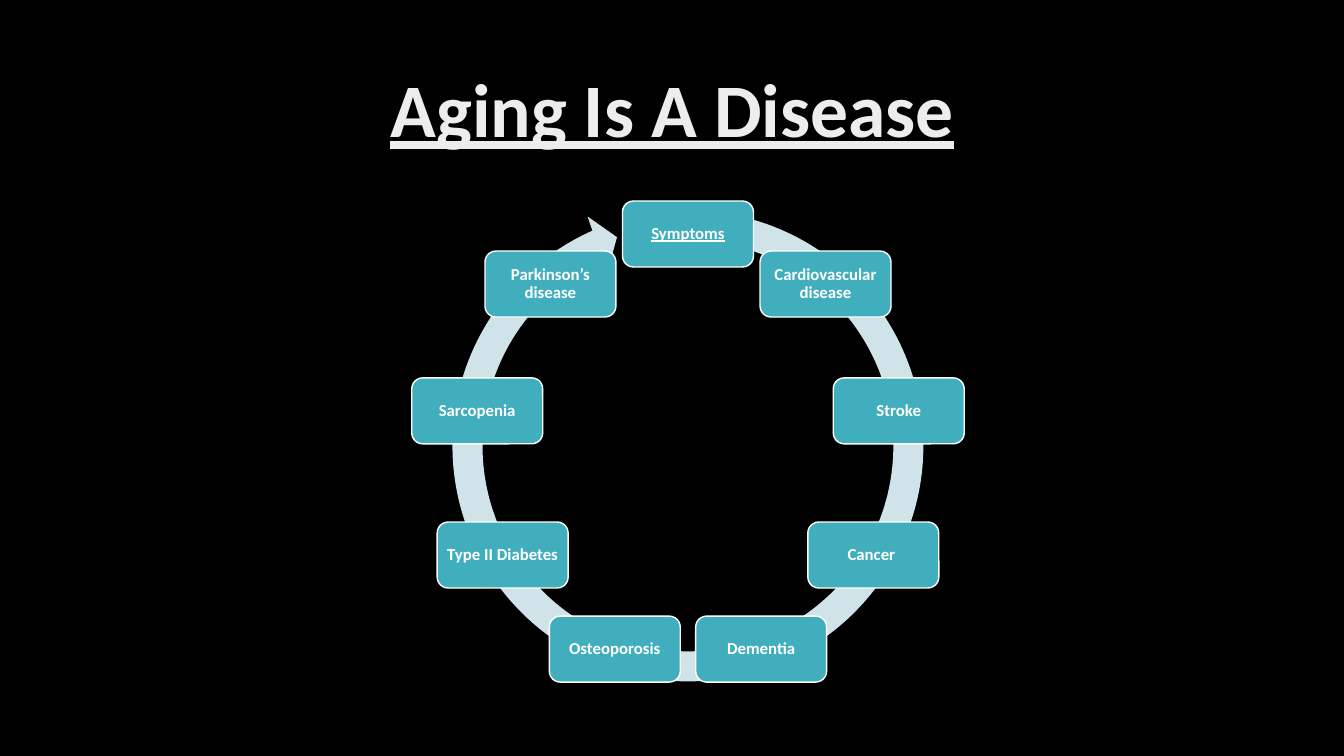
from dataclasses import dataclass
from math import cos, pi, sin

from lxml.etree import SubElement
from pptx import Presentation
from pptx.dml.color import RGBColor
from pptx.enum.shapes import MSO_SHAPE
from pptx.enum.text import MSO_ANCHOR, MSO_AUTO_SIZE, PP_ALIGN
from pptx.oxml import parse_xml
from pptx.oxml.ns import nsdecls, qn
from pptx.util import Emu, Pt


@dataclass(frozen=True)
class Theme:
    font: str = "Calibri"
    background: str = "000000"
    box: str = "41AEBD"
    ring: str = "CFE3E8"
    text: str = "FFFFFF"
    title_stops: tuple = ((0, "BFBFBF"), (28, "EDEDED"), (100, "FFFFFF"))
    title_angle: int = 80
    title_size: int = 54
    label_size: int = 12
    outline: int = 1


THEME = Theme()
EMU_PER_PX = 914400 / 100.8
CENTER_X, CENTER_Y, RADIUS = 688, 448, 214
BOX_W, BOX_H, BOX_INSET = 131, 66, 5
RING_SIZE = 501
RING_ADJUSTMENTS = (0.06, 3.31, 147.43, 168.22, 0.06)
CONDITIONS = (
    "Symptoms", "Cardiovascular disease", "Stroke", "Cancer ", "Dementia",
    "Osteoporosis", "Type II Diabetes", "Sarcopenia", "Parkinson’s disease",
)


def px(n):
    return Emu(round(n * EMU_PER_PX))


def rgb(color):
    return RGBColor.from_string(color)


def write(tf, text, size, color=THEME.text, underline=False):
    tf.word_wrap = True
    tf.auto_size = MSO_AUTO_SIZE.NONE
    tf.vertical_anchor = MSO_ANCHOR.MIDDLE
    p = tf.paragraphs[0]
    p.alignment = PP_ALIGN.CENTER
    p.line_spacing = 0.9
    p.space_before = Pt(0)
    r = p.add_run()
    r.text = text
    r.font.name = THEME.font
    r.font.size = Pt(size)
    r.font.bold = True
    r.font.underline = underline
    if color:
        r.font.fill.solid()
        r.font.fill.fore_color.rgb = rgb(color)
    return r


def fill_gradient(r, stops, angle):
    grad = parse_xml(f"<a:gradFill {nsdecls('a')}><a:gsLst/></a:gradFill>")
    for position, color in stops:
        gs = SubElement(grad[0], qn("a:gs"), pos=str(position * 1000))
        SubElement(gs, qn("a:srgbClr"), val=color)
    SubElement(grad, qn("a:lin"), ang=str(angle * 60000), scaled="0")
    r.font._element.insert(0, grad)


def add_title(s, text):
    title = s.shapes.title
    title.left, title.top, title.width, title.height = map(px, (93, 40, 1159, 146))
    r = write(title.text_frame, text, THEME.title_size, color=None, underline=True)
    fill_gradient(r, THEME.title_stops, THEME.title_angle)


def add_centered_shape(s, kind, x, y, w, h, fill):
    sp = s.shapes.add_shape(kind, px(x - w / 2), px(y - h / 2), px(w), px(h))
    sp.shadow.inherit = False
    sp.fill.solid()
    sp.fill.fore_color.rgb = rgb(fill)
    return sp


def add_ring(s):
    sp = add_centered_shape(s, MSO_SHAPE.CIRCULAR_ARROW, CENTER_X, 446,
                            RING_SIZE, RING_SIZE, THEME.ring)
    sp.line.fill.background()
    for i, value in enumerate(RING_ADJUSTMENTS):
        sp.adjustments[i] = value


def add_box(s, text, x, y, underline=False):
    sp = add_centered_shape(s, MSO_SHAPE.ROUNDED_RECTANGLE, x, y, BOX_W, BOX_H, THEME.box)
    sp.line.color.rgb = rgb(THEME.text)
    sp.line.width = Pt(THEME.outline)
    tf = sp.text_frame
    tf.margin_left = tf.margin_right = tf.margin_top = tf.margin_bottom = px(BOX_INSET)
    write(tf, text, THEME.label_size, underline=underline)


def add_cycle(s):
    add_ring(s)
    for i, condition in enumerate(CONDITIONS):
        angle = 2 * pi * i / len(CONDITIONS)
        x = CENTER_X + RADIUS * sin(angle)
        y = CENTER_Y - RADIUS * cos(angle)
        add_box(s, condition, x, y, underline=i == 0)


def main():
    prs = Presentation()
    prs.slide_width, prs.slide_height = px(1344), px(756)
    s = prs.slides.add_slide(prs.slide_layouts[5])
    s.background.fill.solid()
    s.background.fill.fore_color.rgb = rgb(THEME.background)
    add_title(s, "Aging Is A Disease")
    add_cycle(s)
    prs.save("out.pptx")


if __name__ == "__main__":
    main()
